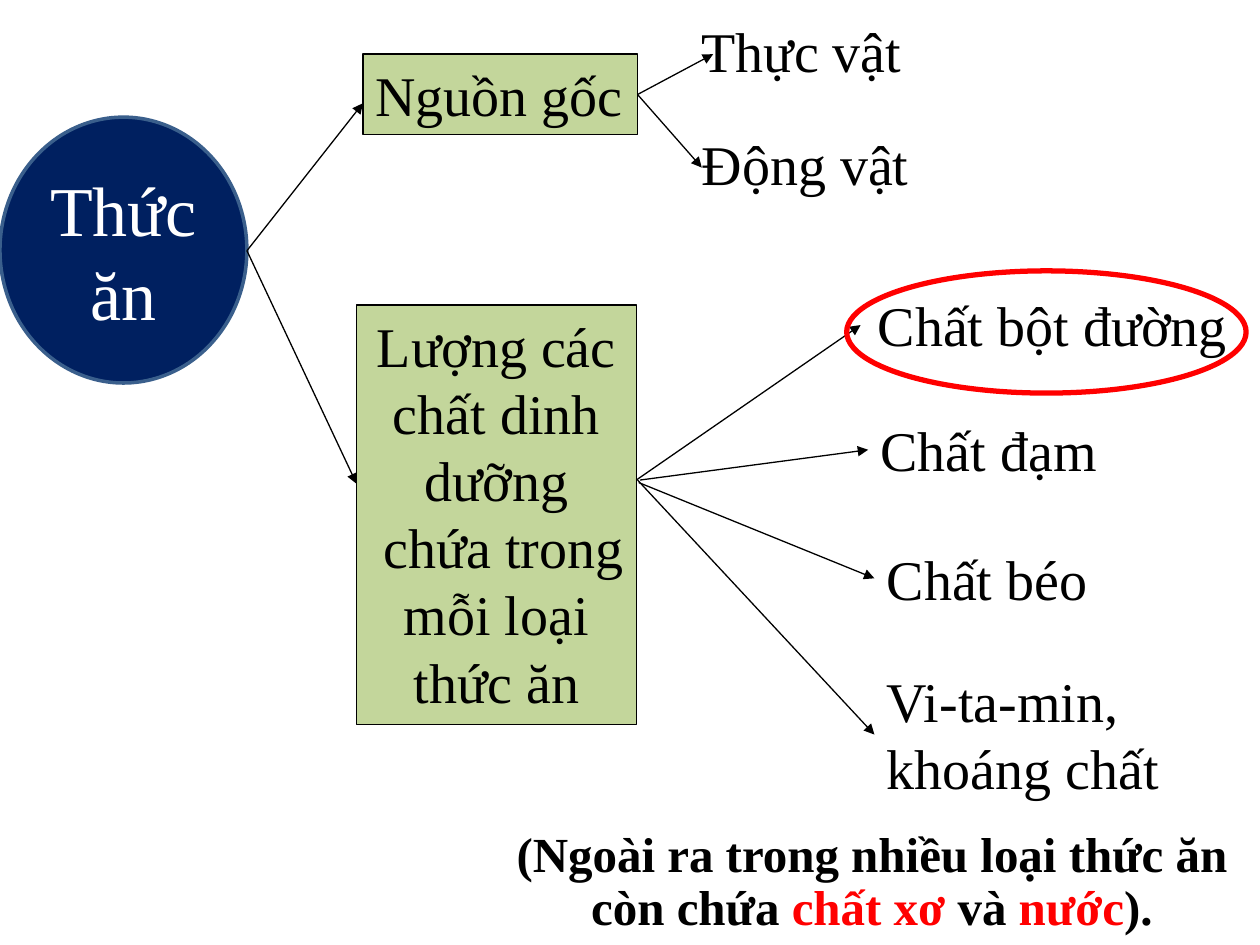
"""Builds a concept map of food: its origins and its nutrients."""
import pptx
import pptx.dml.color
import pptx.enum.shapes
import pptx.enum.text
import pptx.oxml
import pptx.oxml.ns
import pptx.util

Inches = pptx.util.Inches
Pt = pptx.util.Pt
RGBColor = pptx.dml.color.RGBColor
SHAPE = pptx.enum.shapes.MSO_SHAPE
ALIGN = pptx.enum.text.PP_ALIGN

BLACK = RGBColor(0x00, 0x00, 0x00)
WHITE = RGBColor(0xFF, 0xFF, 0xFF)
RED = RGBColor(0xFF, 0x00, 0x00)
NAVY = RGBColor(0x00, 0x20, 0x60)
STEEL = RGBColor(0x3A, 0x5F, 0x8C)
GREEN = RGBColor(0xC3, 0xD6, 0x9B)
LEFT_SIDE, RIGHT_SIDE = 1, 3


def write(frame, text, font="Times New Roman", size=32, color=BLACK, bold=False,
          align=ALIGN.LEFT, spacing=None, wrap=True, grow=True, middle=False):
    frame.word_wrap = wrap
    if grow:
        frame.auto_size = pptx.enum.text.MSO_AUTO_SIZE.SHAPE_TO_FIT_TEXT
    anchor = pptx.enum.text.MSO_ANCHOR
    frame.vertical_anchor = anchor.MIDDLE if middle else anchor.TOP
    for index, line in enumerate([text] if isinstance(text, str) else text):
        paragraph = frame.add_paragraph() if index else frame.paragraphs[0]
        paragraph.alignment = align
        paragraph.line_spacing = spacing
        for words, tint in [(line, color)] if isinstance(line, str) else line:
            run = paragraph.add_run()
            run.text = words
            run.font.name = font
            run.font.size = Pt(size)
            run.font.bold = bold
            run.font.color.rgb = tint


class ConceptMap:
    def __init__(self, slide, line_color=BLACK, line_width=0.75):
        self.slide = slide
        self.line_color = line_color
        self.line_width = line_width

    def node(self, kind, box, text=None, fill=None, line=None, width=None, **style):
        shape = self.slide.shapes.add_shape(kind, *map(Inches, box))
        shape.shadow.inherit = False
        if fill is None:
            shape.fill.background()
        else:
            shape.fill.solid()
            shape.fill.fore_color.rgb = fill
        shape.line.color.rgb = line or self.line_color
        shape.line.width = Pt(width or self.line_width)
        if text:
            write(shape.text_frame, text, **style)
        return shape

    def label(self, box, text, **style):
        label = self.slide.shapes.add_textbox(*map(Inches, box))
        write(label.text_frame, text, **style)
        return label

    def arrow(self, start, end, source=None, target=None):
        arrow = self.slide.shapes.add_connector(
            pptx.enum.shapes.MSO_CONNECTOR.STRAIGHT, *map(Inches, start + end))
        if source:
            arrow.begin_connect(source, RIGHT_SIDE)
        if target:
            arrow.end_connect(target, LEFT_SIDE)
        arrow.line.color.rgb = self.line_color
        arrow.line.width = Pt(self.line_width)
        line = arrow.line._get_or_add_ln()
        head = pptx.oxml.parse_xml(
            f'<a:tailEnd {pptx.oxml.ns.nsdecls("a")} type="triangle"/>')
        line.append(head)
        line.addnext(pptx.oxml.parse_xml(
            f'<a:effectLst {pptx.oxml.ns.nsdecls("a")}/>'))


def main():
    deck = pptx.Presentation()
    deck.slide_width, deck.slide_height = Inches(10), Inches(7.5)
    food_map = ConceptMap(deck.slides.add_slide(deck.slide_layouts[6]))

    food_map.node(SHAPE.OVAL, (0, 0.93, 1.96, 2.11), "Thức ăn", fill=NAVY,
                  line=STEEL, width=2, size=40, color=WHITE,
                  align=ALIGN.CENTER, grow=False, middle=True)
    origin = food_map.node(SHAPE.RECTANGLE, (2.88, 0.43, 2.18, 0.64),
                           "Nguồn gốc", fill=GREEN, wrap=False)
    food_map.node(SHAPE.RECTANGLE, (2.83, 2.42, 2.22, 3.33),
                  ["Lượng các chất dinh dưỡng", " chứa trong mỗi loại thức ăn"],
                  fill=GREEN, align=ALIGN.CENTER)
    food_edge = (1.96, 1.99)
    for branch_end in ((2.88, 0.82), (2.83, 3.84)):
        food_map.arrow(food_edge, branch_end)

    origins = (
        ("Thực vật", (5.47, 0.08, 1.8, 0.64), (5.66, 0.43)),
        ("Động vật", (5.47, 0.98, 1.86, 0.64), (5.57, 1.33)),
    )
    for name, box, tip in origins:
        food_map.label(box, name, wrap=False)
        food_map.arrow((5.06, 0.75), tip, source=origin)

    nutrients = (
        ("Chất bột đường", (6.83, 2.26, 3.05, 0.64), (5.05, 3.81),
         {"align": ALIGN.CENTER}),
        ("Chất đạm", (6.89, 3.25, 1.95, 0.64), (5.08, 3.81), {}),
        ("Chất béo", (6.94, 4.27, 1.81, 0.64), (5.07, 3.83), {"wrap": False}),
        (["Vi-ta-min,", "khoáng chất"], (6.94, 5.24, 2.38, 1.18), (5.06, 3.81),
         {"wrap": False}),
    )
    for name, box, start, style in nutrients:
        nutrient = food_map.label(box, name, **style)
        left, top, _, height = box
        food_map.arrow(start, (left, top + height / 2), target=nutrient)

    food_map.label(
        (3.92, 6.54, 6, 0.95),
        [[("(Ngoài ra trong nhiều loại thức ăn còn chứa ", BLACK),
          ("chất xơ ", RED), ("và ", BLACK), ("nước", RED), (").", BLACK)]],
        size=28, bold=True, align=ALIGN.CENTER, spacing=0.9)
    food_map.node(SHAPE.OVAL, (6.72, 2.15, 3.17, 0.97), line=RED, width=3)

    deck.save("out.pptx")


if __name__ == "__main__":
    main()
